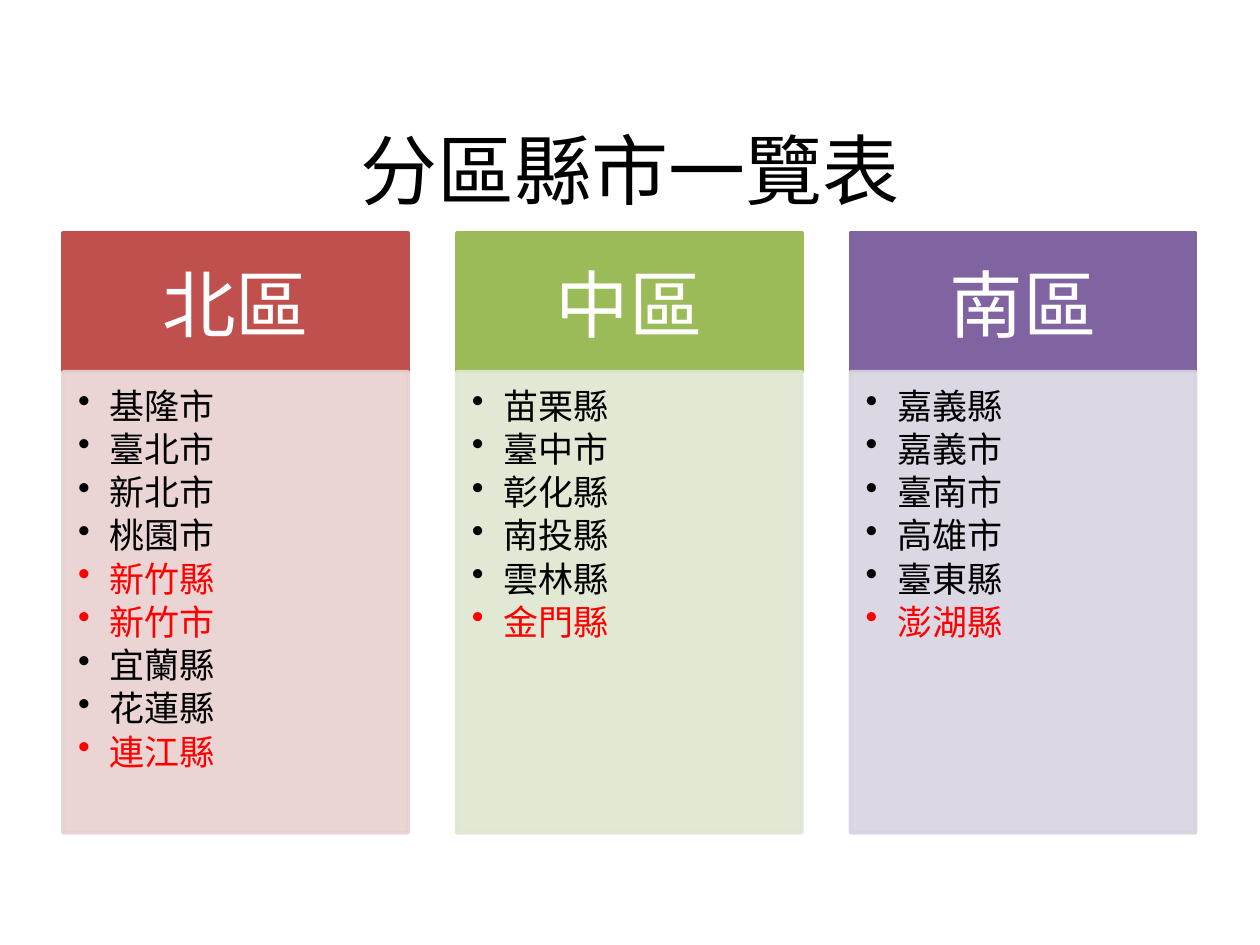
from lxml.etree import SubElement
from pptx import Presentation
from pptx.dml.color import RGBColor
from pptx.enum.shapes import MSO_SHAPE
from pptx.enum.text import MSO_ANCHOR, PP_ALIGN
from pptx.oxml.ns import qn
from pptx.util import Inches, Pt

FONT = "Noto Sans CJK SC"
BLACK, WHITE, RED = "000000", "FFFFFF", "FF0000"

# Name, header colour, body colour, counties, counties shown in red
ZONES = [
    ("北區", "C0504D", "E8D0D0",
     "基隆市 臺北市 新北市 桃園市 新竹縣 新竹市 宜蘭縣 花蓮縣 連江縣",
     "新竹縣 新竹市 連江縣"),
    ("中區", "9BBB59", "DEE7D1",
     "苗栗縣 臺中市 彰化縣 南投縣 雲林縣 金門縣", "金門縣"),
    ("南區", "8064A2", "D8D3E0",
     "嘉義縣 嘉義市 臺南市 高雄市 臺東縣 澎湖縣", "澎湖縣"),
]


def paint(fill, color, alpha=100):
    fill.solid()
    fill.fore_color.rgb = RGBColor.from_string(color)
    if alpha < 100:
        node = fill._xPr.find(qn("a:solidFill"))[0]
        SubElement(node, qn("a:alpha"), val=str(alpha * 1000))


def add_bullet(para, indent):
    props = para._p.get_or_add_pPr()
    props.set("marL", str(Inches(indent)))
    props.set("indent", str(Inches(-indent)))
    SubElement(props, qn("a:buChar"), char="•")


def write(shape, lines, size, line, after=0, align=PP_ALIGN.LEFT,
          anchor=MSO_ANCHOR.MIDDLE, inset=(0.1, 0.05, 0.1, 0.05), bullet=False):
    """Fill a shape with (text, colour) lines."""
    frame = shape.text_frame
    frame.word_wrap = True
    frame.vertical_anchor = anchor
    (frame.margin_left, frame.margin_top,
     frame.margin_right, frame.margin_bottom) = map(Inches, inset)
    for i, (text, color) in enumerate(lines):
        para = frame.add_paragraph() if i else frame.paragraphs[0]
        para.alignment = align
        para.line_spacing = Pt(line)
        para.space_after = Pt(after)
        if bullet:
            add_bullet(para, 0.25)
        run = para.add_run()
        run.text = text
        run.font.size = Pt(size)
        run.font.name = FONT
        SubElement(run._r.get_or_add_rPr(), qn("a:ea"), typeface=FONT)
        run.font.color.rgb = RGBColor.from_string(color)


def add_panel(slide, box, color, alpha=100):
    panel = slide.shapes.add_shape(MSO_SHAPE.RECTANGLE, *map(Inches, box))
    panel.shadow.inherit = False
    paint(panel.fill, color, alpha)
    paint(panel.line.fill, color, alpha)
    panel.line.width = Pt(2)
    return panel


def add_title(slide, box, text):
    title = slide.shapes.add_textbox(*map(Inches, box))
    write(title, [(text, BLACK)], 44, 60, align=PP_ALIGN.CENTER)


def add_zone(slide, box, zone):
    left, top, width, height = box
    name, dark, light, names, marked = zone
    head = 1.1

    # Header band
    header = add_panel(slide, (left, top, width, head), dark)
    write(header, [(name, WHITE)], 42, 51, align=PP_ALIGN.CENTER,
          inset=(0.33, 0.19, 0.33, 0.19))

    # County list
    body = add_panel(slide, (left, top + head, width, height - head), light, 90)
    lines = [(n, RED if n in marked.split() else BLACK) for n in names.split()]
    write(body, lines, 20, 22.5, after=2.2, anchor=MSO_ANCHOR.TOP,
          inset=(0.12, 0.12, 0.16, 0.17), bullet=True)


def main():
    deck = Presentation()
    deck.slide_width, deck.slide_height = Inches(10), Inches(7.5)
    slide = deck.slides.add_slide(deck.slide_layouts[6])

    add_title(slide, (0.5, 0.78, 9, 1.02), "分區縣市一覽表")

    # Three equal columns across the content width
    left, span, width = 0.5, 8.99, 2.74
    step = (span - width) / (len(ZONES) - 1)
    for i, zone in enumerate(ZONES):
        add_zone(slide, (left + i * step, 1.85, width, 4.76), zone)

    deck.save("out.pptx")


if __name__ == "__main__":
    main()
